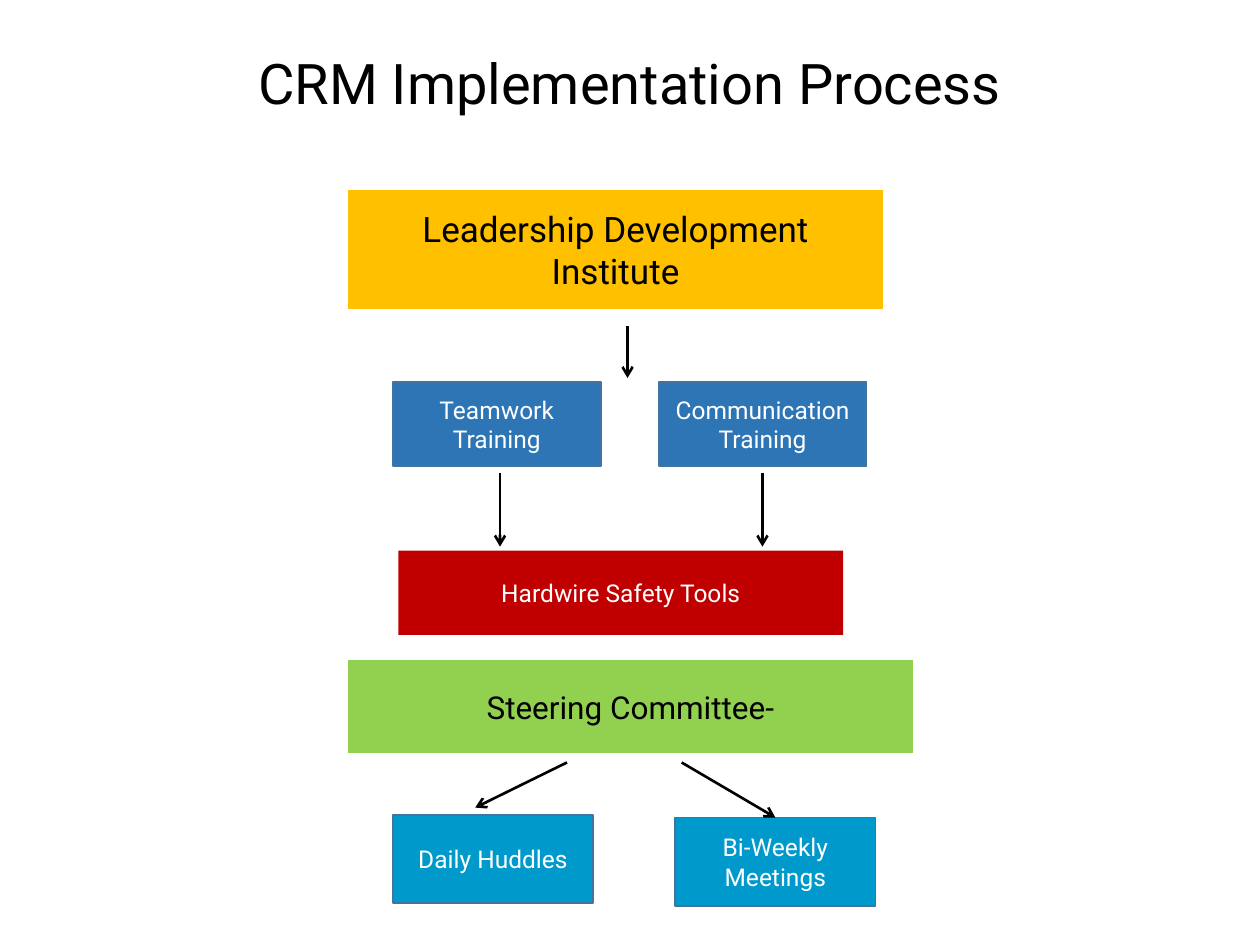
from lxml import etree
from pptx import Presentation
from pptx import util as u
from pptx.dml.color import RGBColor
from pptx.enum import shapes, text
from pptx.oxml.ns import qn

BLACK, WHITE, EDGE = "000000", "FFFFFF", "43739E"
BLUE, TEAL = "2E75B6", "0099CC"
RECT = shapes.MSO_SHAPE.RECTANGLE
STEP = shapes.MSO_SHAPE.FLOWCHART_PROCESS


def color(code):
    return RGBColor.from_string(code)


class Chart:
    font = "Roboto"

    def __init__(self, slide):
        self.slide = slide

    def label(self, frame, words, size, ink):
        frame.text = words
        frame.word_wrap = True
        frame.vertical_anchor = text.MSO_ANCHOR.MIDDLE
        for para in frame.paragraphs:
            para.alignment = text.PP_ALIGN.CENTER
            for run in para.runs:
                run.font.name = self.font
                run.font.size = u.Pt(size)
                run.font.color.rgb = color(ink)

    def title(self, words, left, top, width, height):
        head = self.slide.shapes.title
        head.left, head.top = u.Cm(left), u.Cm(top)
        head.width, head.height = u.Cm(width), u.Cm(height)
        self.label(head.text_frame, words, 32, BLACK)
        head.text_frame.paragraphs[0].line_spacing = 0.9

    def box(self, words, left, top, width, height, fill,
            size=14, ink=WHITE, kind=RECT, edge=None):
        box = self.slide.shapes.add_shape(
            kind, u.Cm(left), u.Cm(top), u.Cm(width), u.Cm(height))
        box.shadow.inherit = False
        box.fill.solid()
        box.fill.fore_color.rgb = color(fill)
        if edge:
            box.line.color.rgb = color(edge)
            box.line.width = u.Pt(1)
        else:
            box.line.fill.background()
        self.label(box.text_frame, words, size, ink)
        return box

    def arrow(self, x1, y1, x2, y2):
        line = self.slide.shapes.add_connector(
            shapes.MSO_CONNECTOR.STRAIGHT,
            u.Cm(x1), u.Cm(y1), u.Cm(x2), u.Cm(y2))
        line.line.color.rgb = color(BLACK)
        line.line.width = u.Pt(1.5)
        props = line._element.spPr
        tip = etree.SubElement(props.find(qn("a:ln")), qn("a:tailEnd"))
        tip.set("type", "arrow")
        etree.SubElement(props, qn("a:effectLst"))
        return line


def main():
    deck = Presentation()
    deck.slide_width, deck.slide_height = u.Cm(25.4), u.Cm(19.05)
    chart = Chart(deck.slides.add_slide(deck.slide_layouts[5]))
    chart.title("CRM Implementation Process", 1.75, 0, 21.9, 3.5)

    # Leadership and the two trainings
    chart.box("Leadership Development Institute", 7.01, 3.84, 10.8, 2.39,
              "FFC000", 20, BLACK, STEP)
    chart.arrow(12.65, 6.58, 12.65, 7.62)
    for words, left in (("Teamwork Training", 7.92),
                        ("Communication\nTraining", 13.28)):
        chart.box(words, left, 7.7, 4.19, 1.7, BLUE, edge=EDGE)

    # Safety tools
    for x in (10.08, 15.37):
        chart.arrow(x, 9.53, x, 11.02)
    chart.box("Hardwire Safety Tools", 8.03, 11.1, 8.97, 1.7, "C00000")

    # Committee and its meetings
    chart.box("Steering Committee-", 7.01, 13.31, 11.4, 1.88,
              "92D050", 18, BLACK, STEP)
    chart.box("Daily Huddles", 7.92, 16.43, 4.04, 1.78, TEAL, edge=EDGE)
    meet = chart.box("Bi-Weekly Meetings", 13.61, 16.48, 4.04, 1.78,
                     TEAL, edge=EDGE)
    chart.arrow(11.43, 15.37, 9.58, 16.28)
    chart.arrow(13.74, 15.37, 15.63, 16.48).end_connect(meet, 0)

    deck.save("out.pptx")


if __name__ == "__main__":
    main()
